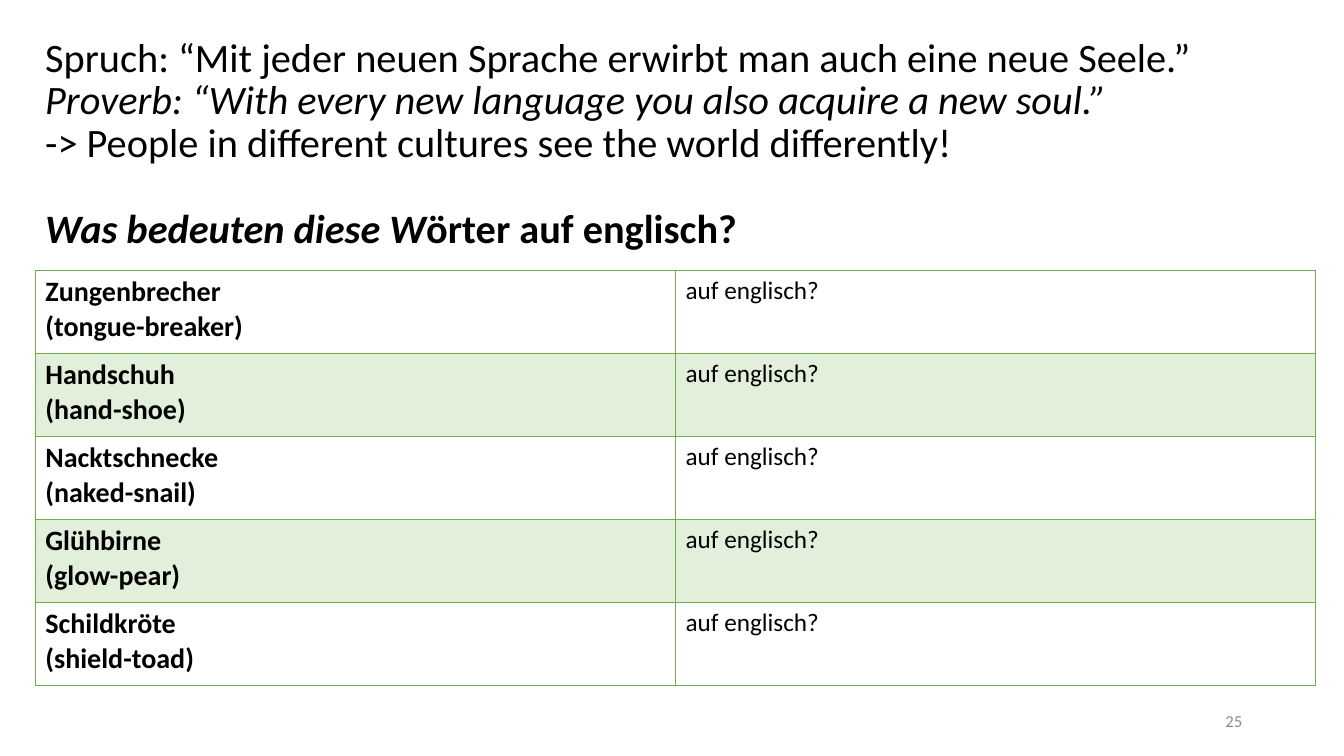
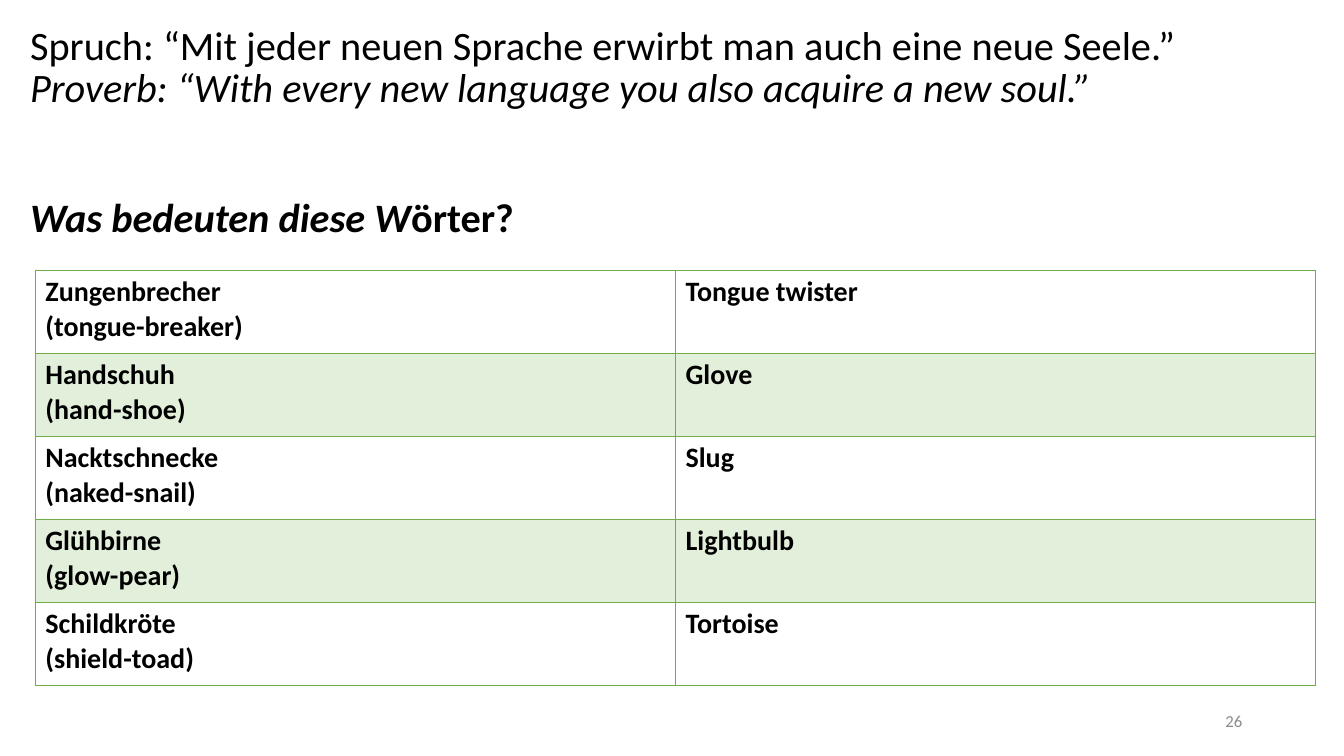
from dataclasses import dataclass

from lxml import etree
from pptx import Presentation
from pptx import util as u
from pptx.dml.color import RGBColor
from pptx.enum import text
from pptx.oxml import ns


@dataclass(frozen=True)
class Theme:
    font: str = "Calibri"
    ink: str = "000000"
    muted: str = "8C8C8C"
    border: str = "70AD47"
    row_fills: tuple = ("FFFFFF", "E2EFDA")
    title_size: float = 28.8
    term_size: float = 20
    prompt_size: float = 18
    number_size: float = 12
    title_spacing: float = 0.88
    title_line: float = 31
    border_width: float = 1


class Deck:
    def __init__(self, theme):
        self.theme = theme
        self.presentation = Presentation()
        self.presentation.slide_width = u.Inches(13.33)
        self.presentation.slide_height = u.Inches(7.5)
        self.slide = None

    def new_slide(self):
        self.slide = self.presentation.slides.add_slide(self.presentation.slide_layouts[6])

    def style(self, run, size, color=None, bold=False, italic=False):
        font = run.font
        font.name, font.size = self.theme.font, u.Pt(size)
        font.bold, font.italic = bold, italic
        font.color.rgb = RGBColor.from_string(color or self.theme.ink)

    def text_box(self, left, top, width, height, anchor):
        frame = self.slide.shapes.add_textbox(*map(u.Inches, (left, top, width, height))).text_frame
        frame.word_wrap = True
        frame.vertical_anchor = anchor
        return frame

    def title(self, left, top, lines):
        """Each line is (blank lines before it, [(words, bold, italic), ...])."""
        frame = self.text_box(left, top, 12.36, 2.3, text.MSO_ANCHOR.TOP)
        for index, (gap, parts) in enumerate(lines):
            paragraph = frame.add_paragraph() if index else frame.paragraphs[0]
            paragraph.line_spacing = self.theme.title_spacing
            paragraph.space_before = u.Pt(gap * self.theme.title_line)
            for words, bold, italic in parts:
                run = paragraph.add_run()
                run.text = words
                self.style(run, self.theme.title_size, bold=bold, italic=italic)

    def slide_number(self, number):
        frame = self.text_box(9.42, 6.95, 3, 0.4, text.MSO_ANCHOR.MIDDLE)
        frame.text = str(number)
        paragraph = frame.paragraphs[0]
        paragraph.alignment = text.PP_ALIGN.RIGHT
        self.style(paragraph.runs[0], self.theme.number_size, self.theme.muted)

    def outline_cell(self, cell):
        properties = cell._tc.get_or_add_tcPr()
        for side in ("a:lnL", "a:lnR", "a:lnT", "a:lnB"):
            line = etree.SubElement(properties, ns.qn(side), w=str(u.Pt(self.theme.border_width)))
            fill = etree.SubElement(line, ns.qn("a:solidFill"))
            etree.SubElement(fill, ns.qn("a:srgbClr"), val=self.theme.border)

    def word_table(self, rows, answer_size, answer_bold):
        table = self.slide.shapes.add_table(
            len(rows), 2, *map(u.Inches, (0.35, 2.68, 12.7, 4.12))).table
        table.first_row = table.horz_banding = False
        formats = ((self.theme.term_size, True), (answer_size, answer_bold))
        for index, row in enumerate(rows):
            fill = self.theme.row_fills[index % 2]
            for cell, words, (size, bold) in zip(table.rows[index].cells, row, formats):
                self.outline_cell(cell)
                cell.fill.solid()
                cell.fill.fore_color.rgb = RGBColor.from_string(fill)
                cell.text_frame.text = words
                for paragraph in cell.text_frame.paragraphs:
                    self.style(paragraph.runs[0], size, bold=bold)


TERMS = (
    ("Zungenbrecher\n(tongue-breaker)", "Tongue twister"),
    ("Handschuh\n(hand-shoe)", "Glove"),
    ("Nacktschnecke\n(naked-snail)", "Slug"),
    ("Glühbirne\n(glow-pear)", "Lightbulb"),
    ("Schildkröte\n(shield-toad)", "Tortoise"),
)
PROVERB = [
    (0, [("Spruch: “Mit jeder neuen Sprache erwirbt man auch eine neue Seele.”", False, False)]),
    (0, [("Proverb: “With every new language you also acquire a new soul.”", False, True)]),
]
MORAL = (0, [("-> People in different cultures see the world differently!", False, False)])


def question(gap, ending):
    return gap, [("Was bedeuten diese W", True, True), (ending, True, False)]


def main():
    theme = Theme()
    deck = Deck(theme)

    deck.new_slide()
    deck.title(0.35, 0.33, PROVERB + [MORAL, question(1, "örter auf englisch?")])
    deck.slide_number(25)
    deck.word_table([(term, "auf englisch?") for term, _ in TERMS], theme.prompt_size, False)

    deck.new_slide()
    deck.title(0.2, 0.21, PROVERB + [question(2, "örter?")])
    deck.slide_number(26)
    deck.word_table(TERMS, theme.term_size, True)

    deck.presentation.save("out.pptx")


if __name__ == "__main__":
    main()
